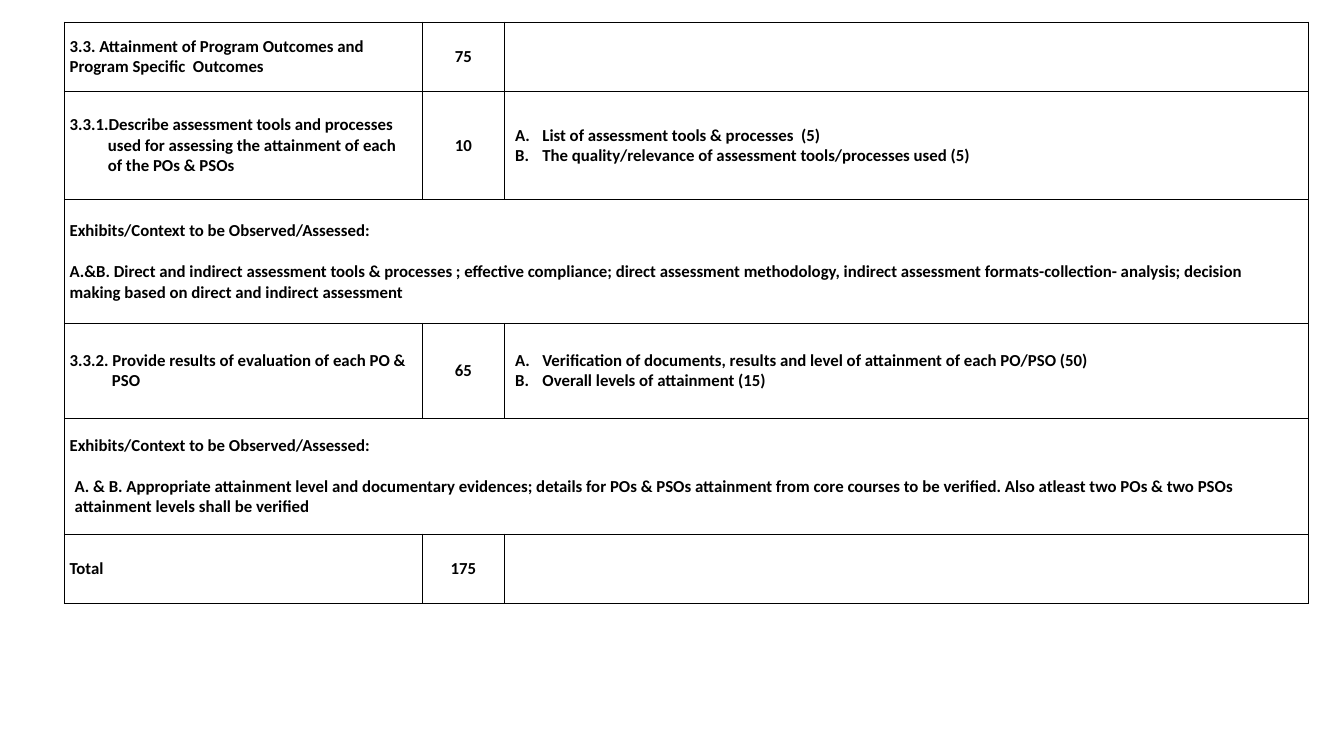
"""Build the assessment table for program outcome attainment."""
from lxml.etree import SubElement
from pptx import Presentation
from pptx.dml.color import RGBColor
from pptx.enum.text import MSO_ANCHOR, PP_ALIGN
from pptx.oxml.ns import qn
from pptx.util import Inches, Pt

COLORS = {"ink": "000000"}
FONT, SIZE, BORDER = "Calibri", Pt(12), Pt(1)
LEFT, TOP = 0.64, 0.22
COLS = [3.55, 0.81, 7.98]
ROW_HEIGHTS = [0.69, 1.07, 1.23, 0.94, 1.15, 0.69]
EXHIBITS = "Exhibits/Context to be Observed/Assessed:"
CRITERION_ROWS = {
    0: ("3.3. Attainment of Program Outcomes and Program Specific  Outcomes", (0.05, 0), "75", []),
    1: ("3.3.1.Describe assessment tools and processes used for assessing the "
        "attainment of each of the POs & PSOs", (0.43, -0.38), "10",
        ["List of assessment tools & processes  (5)",
         "The quality/relevance of assessment tools/processes used (5)"]),
    3: ("3.3.2. Provide results of evaluation of each PO & PSO", (0.47, -0.42), "65",
        ["Verification of documents, results and level of attainment of each PO/PSO (50)",
         "Overall levels of attainment (15)"]),
    5: ("Total", (0.05, 0), "175", []),
}
EXHIBIT_ROWS = {
    2: ("A.&B. Direct and indirect assessment tools & processes ; effective compliance; "
        "direct assessment methodology, indirect assessment formats-collection- analysis; "
        "decision making based on direct and indirect assessment", 0.05),
    4: ("A. & B. Appropriate attainment level and documentary evidences; details for POs & "
        "PSOs attainment from core courses to be verified. Also atleast two POs & two PSOs "
        "attainment levels shall be verified", 0.1),
}
TEXT_INDENT, LIST_INDENT = (0.05, 0), (0.38, -0.27)
FIRST_GAP, BODY_GAP = 3.8, 14.8
LABEL_RIGHT, EXHIBIT_RIGHT = 0.12, 0.3


def style_cell(cell):
    """Clear the fill and margins and draw the four borders."""
    cell.fill.background()
    cell.vertical_anchor = MSO_ANCHOR.MIDDLE
    cell.margin_left = cell.margin_right = cell.margin_top = cell.margin_bottom = 0
    tcPr = cell._tc.get_or_add_tcPr()
    for i, side in enumerate(("a:lnL", "a:lnR", "a:lnT", "a:lnB")):
        ln = SubElement(tcPr, qn(side), w=str(BORDER))
        SubElement(SubElement(ln, qn("a:solidFill")), qn("a:srgbClr"), val=COLORS["ink"])
        tcPr.insert(i, ln)


def write(cell, lines, indents, gap=0, align=PP_ALIGN.LEFT, lettered=False, right=0):
    """Fill a cell with bold paragraphs, optionally lettered A., B."""
    cell.margin_right = Inches(right)
    tf = cell.text_frame
    tf.text = "\n".join(lines)
    for i, (p, (margin, hang)) in enumerate(zip(tf.paragraphs, indents)):
        p.alignment = align
        p.space_before = Pt(gap if i else FIRST_GAP)
        pPr = p._p.get_or_add_pPr()
        pPr.set("marL", str(Inches(margin)))
        pPr.set("indent", str(Inches(hang)))
        if lettered:
            SubElement(pPr, qn("a:buFont"), typeface=FONT)
            SubElement(pPr, qn("a:buAutoNum"), type="alphaUcPeriod")
        for r in p.runs:
            r.font.name, r.font.size, r.font.bold = FONT, SIZE, True
            r.font.color.rgb = RGBColor.from_string(COLORS["ink"])


def main():
    """Create the slide and save it."""
    prs = Presentation()
    prs.slide_width, prs.slide_height = Inches(13.33), Inches(7.5)
    s = prs.slides.add_slide(prs.slide_layouts[6])
    table = s.shapes.add_table(len(ROW_HEIGHTS), len(COLS), Inches(LEFT), Inches(TOP),
                               Inches(sum(COLS)), Inches(sum(ROW_HEIGHTS))).table
    table.first_row = table.horz_banding = False
    for col, width in zip(table.columns, COLS):
        col.width = Inches(width)
    for row, height in zip(table.rows, ROW_HEIGHTS):
        row.height = Inches(height)
    for cell in table.iter_cells():
        style_cell(cell)
    for i, (label, indent, marks, criteria) in CRITERION_ROWS.items():
        write(table.cell(i, 0), [label], [indent], right=LABEL_RIGHT)
        write(table.cell(i, 1), [marks], [(0, 0)], align=PP_ALIGN.CENTER)
        if criteria:
            write(table.cell(i, 2), criteria, [LIST_INDENT] * len(criteria), lettered=True)
    for i, (body, margin) in EXHIBIT_ROWS.items():
        table.cell(i, 0).merge(table.cell(i, len(COLS) - 1))
        write(table.cell(i, 0), [EXHIBITS, body], [TEXT_INDENT, (margin, 0)],
              gap=BODY_GAP, right=EXHIBIT_RIGHT)
    prs.save("out.pptx")


if __name__ == "__main__":
    main()
